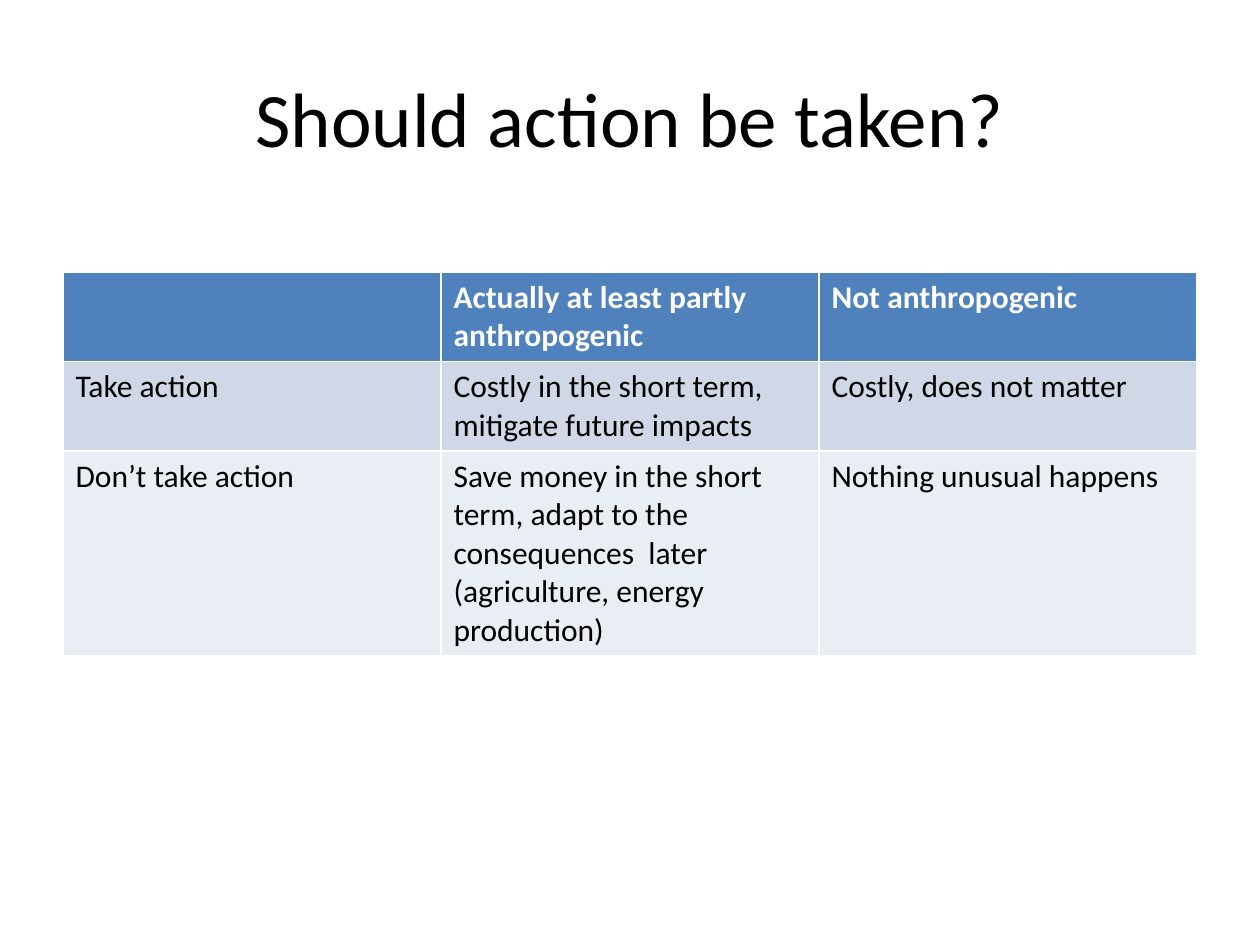
from pptx import Presentation
from pptx.dml.color import RGBColor
from pptx.enum.text import MSO_ANCHOR, PP_ALIGN
from pptx.util import Inches, Pt

MIDDLE = MSO_ANCHOR.MIDDLE
LEFT, CENTER = PP_ALIGN.LEFT, PP_ALIGN.CENTER
TITLE_ONLY = 5
FONT = "Calibri"
BLACK, WHITE = "000000", "FFFFFF"
ROW_FILLS = ["4F81BD", "D0D8E8", "E9EDF4"]
ROW_HEIGHT = 0.41
DECISION_ROWS = [
    ["", "Actually at least partly anthropogenic", "Not anthropogenic"],
    ["Take action", "Costly in the short term, mitigate future impacts",
     "Costly, does not matter"],
    ["Don’t take action",
     "Save money in the short term, adapt to the consequences  later "
     "(agriculture, energy production)",
     "Nothing unusual happens"],
]


def rgb(value):
    return RGBColor.from_string(value)


def write_text(frame, text, size=18, color=BLACK, bold=False, align=LEFT):
    paragraph = frame.paragraphs[0]
    paragraph.alignment = align
    if not text:
        return
    run = paragraph.add_run()
    run.text = text
    run.font.name = FONT
    run.font.size = Pt(size)
    run.font.bold = bold
    run.font.color.rgb = rgb(color)


def place_title(slide, text, left, top, width, height):
    title = slide.shapes.title
    title.left, title.top = Inches(left), Inches(top)
    title.width, title.height = Inches(width), Inches(height)
    title.text_frame.vertical_anchor = MIDDLE
    write_text(title.text_frame, text, size=44, align=CENTER)


def place_decision_table(slide, rows, left, top, width):
    column_count = len(rows[0])
    table = slide.shapes.add_table(
        len(rows), column_count, Inches(left), Inches(top),
        Inches(width), Inches(ROW_HEIGHT * len(rows))).table
    for column in table.columns:
        column.width = Inches(width / column_count)
    for row_index, (texts, fill) in enumerate(zip(rows, ROW_FILLS)):
        is_header = row_index == 0
        table.rows[row_index].height = Inches(ROW_HEIGHT)
        for column_index, text in enumerate(texts):
            cell = table.cell(row_index, column_index)
            cell.fill.solid()
            cell.fill.fore_color.rgb = rgb(fill)
            write_text(cell.text_frame, text, bold=is_header,
                       color=WHITE if is_header else BLACK)


def main():
    presentation = Presentation()
    presentation.slide_width = Inches(10)
    presentation.slide_height = Inches(7.5)
    slide = presentation.slides.add_slide(presentation.slide_layouts[TITLE_ONLY])
    place_title(slide, "Should action be taken?", 0.5, 0.3, 9, 1.25)
    place_decision_table(slide, DECISION_ROWS, 0.5, 2.16, 9)
    presentation.save("out.pptx")


if __name__ == "__main__":
    main()
